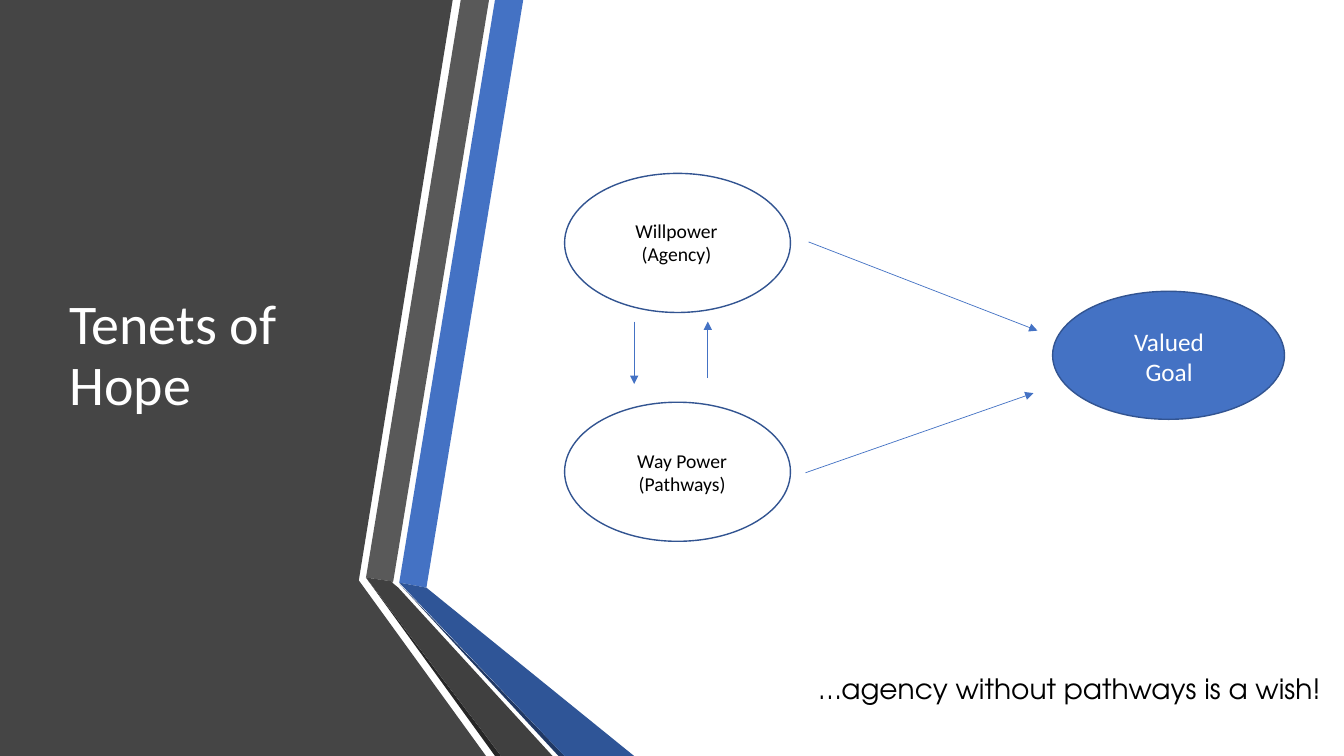
import pptx
import pptx.util
import pptx.dml.color
import pptx.enum.shapes
import pptx.enum.text
import pptx.oxml
import pptx.oxml.ns

PX = 9144  # EMU per px, 100 px to the inch
COLORS = {
    "panel": "454545", "blue": "4472C4", "gray": "595959",
    "gray_edge": "262626", "blue_edge": "203864",
    "blue_fold": "2F5597", "gray_fold": "404040",
    "outline": "325491", "white": "FFFFFF", "black": "000000",
}
RIBBONS = [
    ("panel", [(0, 0), (353, 0), (449, 0), (356, 575), (356, 576), (482, 750), (0, 750)]),
    ("blue", [(396, 578), (423, 583), (519, 0), (491, 0)]),
    ("gray", [(485, 0), (457, 0), (363, 573), (390, 577)]),
    ("gray_edge", [(363, 573), (491, 750), (497, 750)]),
    ("blue_edge", [(396, 579), (554, 750), (560, 750)]),
    ("blue_fold", [(396, 578), (560, 750), (629, 750), (423, 583)]),
    ("gray_fold", [(548, 750), (395, 583), (389, 578), (390, 577), (363, 573), (497, 750)]),
]


def rgb(name):
    return pptx.dml.color.RGBColor.from_string(COLORS[name])


def px(*lengths):
    return [pptx.util.Emu(length * PX) for length in lengths]


def add_text(slide, box, text, size, color="black", font="Calibri",
             align="LEFT", anchor="TOP", line_spacing=None):
    frame = slide.shapes.add_textbox(*px(*box)).text_frame
    frame.word_wrap = True
    frame.vertical_anchor = getattr(pptx.enum.text.MSO_ANCHOR, anchor)
    for index, line in enumerate(text.split("\n")):
        paragraph = frame.add_paragraph() if index else frame.paragraphs[0]
        paragraph.alignment = getattr(pptx.enum.text.PP_ALIGN, align)
        if line_spacing:
            paragraph.line_spacing = line_spacing
        run = paragraph.add_run()
        run.text = line
        run.font.name = font
        run.font.size = pptx.util.Pt(size)
        run.font.color.rgb = rgb(color)


def add_arrow(slide, start, end):
    arrow = slide.shapes.add_connector(
        pptx.enum.shapes.MSO_CONNECTOR.STRAIGHT, *px(*start, *end))
    arrow.line.color.rgb = rgb("blue")
    arrow.line.width = pptx.util.Pt(0.5)
    head = pptx.oxml.parse_xml(
        f'<a:tailEnd {pptx.oxml.ns.nsdecls("a")} type="triangle"/>')
    arrow.line._get_or_add_ln().append(head)
    arrow._element.spPr.append(
        pptx.oxml.parse_xml(f'<a:effectLst {pptx.oxml.ns.nsdecls("a")}/>'))


def add_node(slide, box, label_box, label, size, color="black", fill=None):
    left, top, width, height = box
    node = slide.shapes.add_shape(
        pptx.enum.shapes.MSO_SHAPE.OVAL, *px(left, top, width, height))
    node.shadow.inherit = False
    if fill:
        node.fill.solid()
        node.fill.fore_color.rgb = rgb(fill)
    else:
        node.fill.background()
    node.line.color.rgb = rgb("outline")
    node.line.width = pptx.util.Pt(1)
    dx, dy, label_width, label_height = label_box
    add_text(slide, (left + dx, top + dy, label_width, label_height),
             label, size, color, align="CENTER")


def add_title_panel(slide, left, top):
    # Dark panel and folded ribbons
    for color, points in RIBBONS:
        builder = slide.shapes.build_freeform(*points[0], scale=PX)
        builder.add_line_segments(points[1:], close=True)
        ribbon = builder.convert_to_shape(*px(left, top))
        ribbon.shadow.inherit = False
        ribbon.fill.solid()
        ribbon.fill.fore_color.rgb = rgb(color)
        ribbon.line.fill.background()
    # Title
    add_text(slide, (left + 59, top + 75, 304, 558), "Tenets of Hope", 40,
             "white", anchor="MIDDLE", line_spacing=0.9)


def add_hope_diagram(slide, left, top):
    # Two sources of hope and the goal they lead to
    add_node(slide, (left, top, 224, 138), (59, 40, 104, 57),
             "Willpower (Agency)", 14)
    add_node(slide, (left, top + 227, 224, 138), (59, 41, 115, 57),
             "Way Power\n(Pathways)", 14)
    add_node(slide, (left + 484, top + 117, 230, 127), (67, 30, 97, 71),
             "Valued Goal", 18, "white", "blue")
    # Arrows to the goal, then between the sources
    for x1, y1, x2, y2 in [(242, 68, 469, 156), (239, 297, 465, 218),
                           (69, 147, 69, 209), (142, 203, 142, 147)]:
        add_arrow(slide, (left + x1, top + y1), (left + x2, top + y2))


def main():
    deck = pptx.Presentation()
    deck.slide_width, deck.slide_height = px(1333, 750)
    slide = deck.slides.add_slide(deck.slide_layouts[6])
    add_title_panel(slide, 0, 0)
    add_hope_diagram(slide, 560, 172)
    # Closing remark
    add_text(slide, (802, 661, 544, 44), "…agency without pathways is a wish!",
             20, font="TeX Gyre Adventor")
    deck.save("out.pptx")


if __name__ == "__main__":
    main()
